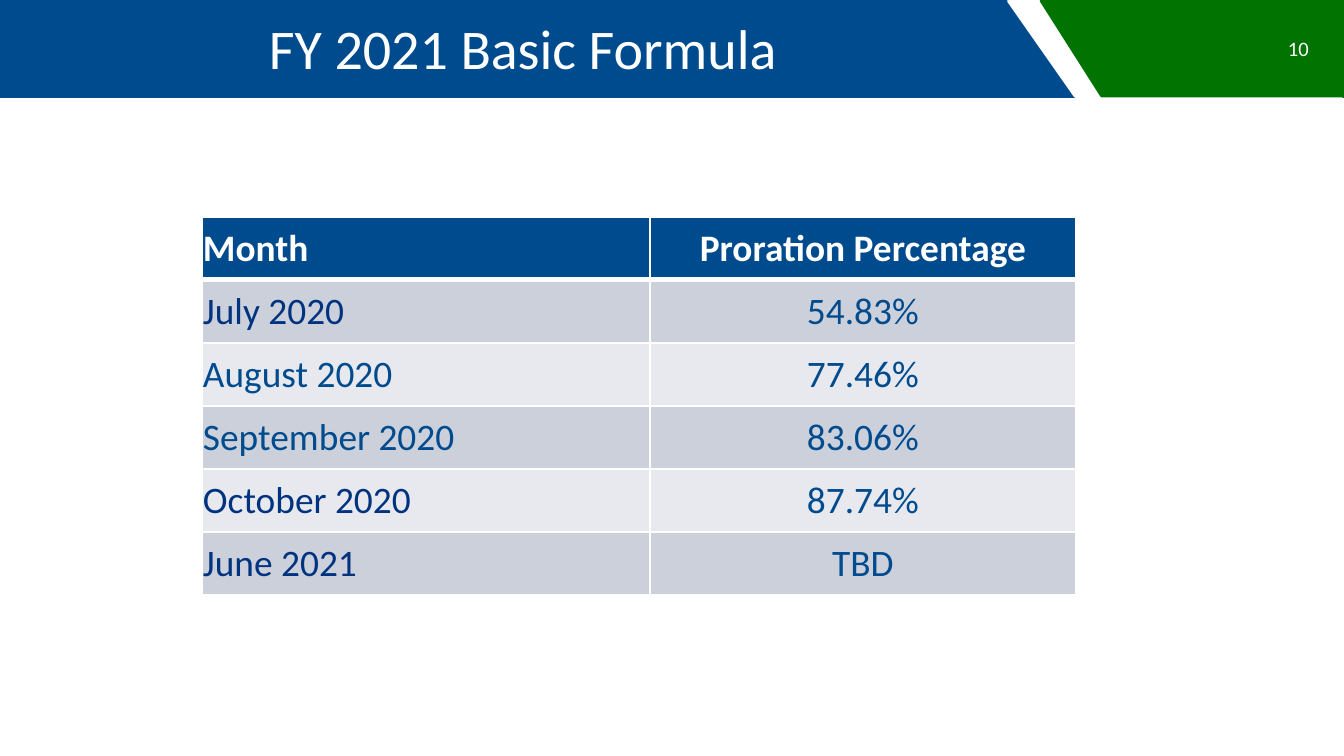
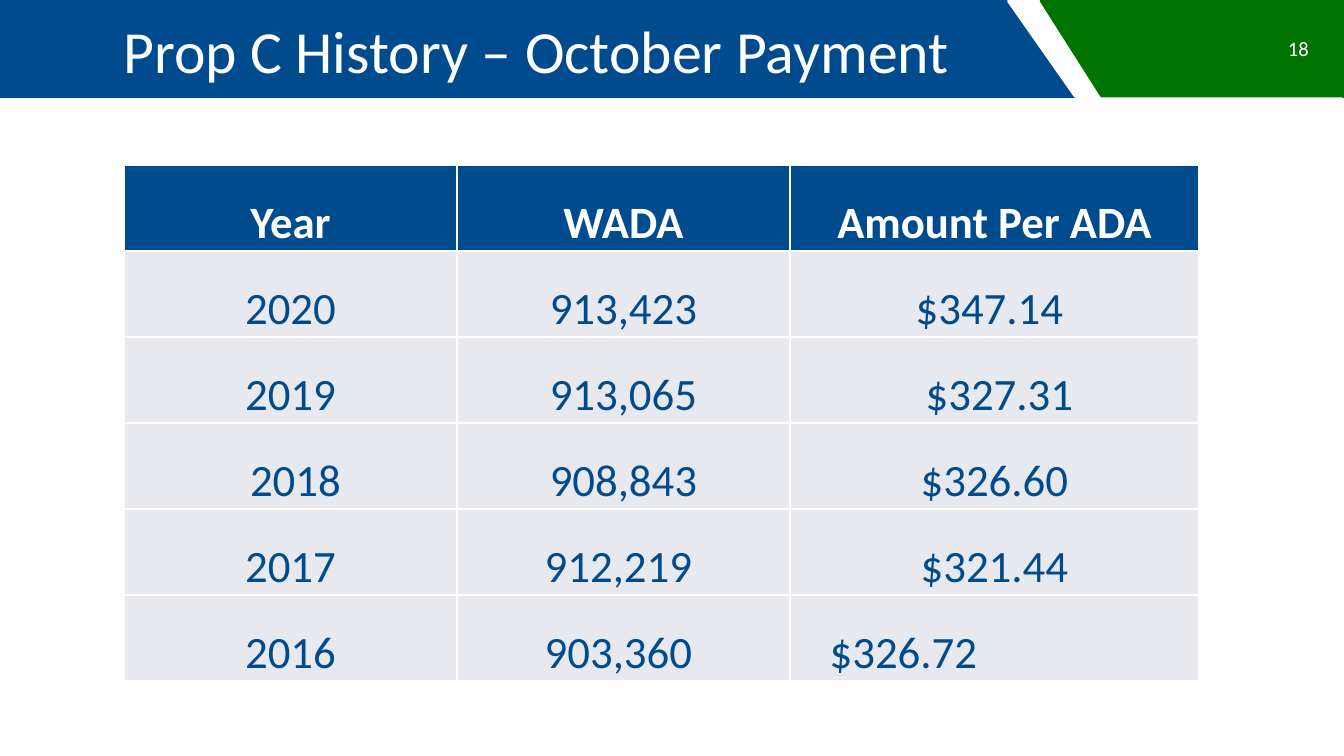
from lxml import etree
from pptx import Presentation
from pptx import util as u
from pptx.dml.color import RGBColor
from pptx.enum import shapes, text
from pptx.oxml import ns

PX = 914400 / 134.4
FONT = "Calibri"
WHITE = RGBColor(0xFF, 0xFF, 0xFF)
BLUE = RGBColor(0x00, 0x4B, 0x8D)
NAVY = RGBColor(0x00, 0x33, 0x7F)
GREEN = RGBColor(0x00, 0x73, 0x00)
GREY = RGBColor(0xCC, 0xD0, 0xDB)
PALE = RGBColor(0xE7, 0xE9, 0xEE)
LEFT, CENTER, RIGHT = text.PP_ALIGN.LEFT, text.PP_ALIGN.CENTER, text.PP_ALIGN.RIGHT
MIDDLE, BOTTOM = text.MSO_ANCHOR.MIDDLE, text.MSO_ANCHOR.BOTTOM

PRORATION = [
    ("Month", "Proration Percentage"),
    ("July 2020", "54.83%"),
    ("August 2020", "77.46%"),
    ("September 2020", "83.06%"),
    ("October 2020", "87.74%"),
    ("June 2021", "TBD"),
]
NAVY_MONTHS = {"July 2020", "October 2020", "June 2021"}
PROP_C = [
    ("Year", "WADA", "Amount Per ADA"),
    ("2020", "913,423", "$347.14"),
    ("2019", "913,065", "$327.31"),
    ("2018", "908,843", "$326.60"),
    ("2017", "912,219", "$321.44"),
    ("2016", "903,360", "$326.72"),
]
SHIFTS = {"$347.14": -5, "$327.31": 5, "2018": 5, "912,219": -5,
          "903,360": -5, "$326.72": -91}


def px(length):
    """Turn whole pixels into EMU."""
    return u.Emu(round(length * PX))


def write(frame, words, size, color=WHITE, bold=False, align=LEFT, indent=0):
    """Put one formatted paragraph into a text frame."""
    frame.word_wrap = True
    para = frame.paragraphs[0]
    para.alignment = align
    if indent:
        properties = para._p.get_or_add_pPr()
        properties.set("marL", str(px(indent)))
        properties.set("indent", "0")
    span = para.add_run()
    span.text = words
    span.font.name, span.font.size = FONT, u.Pt(size)
    span.font.bold, span.font.color.rgb = bold, color


def add_block(page, kind, box, fill, rotation=0, outline=0):
    """Draw a filled shape with an optional outline of its own colour."""
    shape = page.shapes.add_shape(kind, *map(px, box))
    shape.shadow.inherit = False
    shape.rotation = rotation
    shape.fill.solid()
    shape.fill.fore_color.rgb = fill
    if outline:
        shape.line.color.rgb = fill
        shape.line.width = u.Pt(outline)
    else:
        shape.line.fill.background()


def add_header(page, box, title, size, number, indent):
    """Draw the title band with its slanted corner, title and page number."""
    left, top, width, height = box
    right = left + width
    add_block(page, shapes.MSO_SHAPE.RECTANGLE, box, BLUE)
    for offset, rise, length, fill in ((216, 118, 333, WHITE), (199, 103, 302, GREEN)):
        slant = (right - offset, top - rise, 95, length)
        add_block(page, shapes.MSO_SHAPE.FLOWCHART_MANUAL_INPUT, slant, fill, 270, 2)
    label = page.shapes.add_textbox(*map(px, (right - 134, top + 28, 112, 40)))
    label.text_frame.vertical_anchor = MIDDLE
    write(label.text_frame, number, 11, align=RIGHT)
    heading = page.shapes.add_textbox(*map(px, (left + 44, top + 7, 942, 87)))
    write(heading.text_frame, title, size, align=CENTER, indent=indent)


def set_borders(cell, top=1, bottom=1):
    """Give a cell white borders, with widths in points."""
    properties = cell._tc.get_or_add_tcPr()
    sides = (("lnL", 1), ("lnR", 1), ("lnT", top), ("lnB", bottom))
    for position, (side, width) in enumerate(sides):
        line = etree.Element(ns.qn(f"a:{side}"), w=str(u.Pt(width)))
        fill = etree.SubElement(line, ns.qn("a:solidFill"))
        etree.SubElement(fill, ns.qn("a:srgbClr"), val=str(WHITE))
        properties.insert(position, line)


def add_table(page, box, rows, widths, size, anchor, aligns, bands, rule=1):
    """Draw a table with a blue heading row and banded body rows."""
    table = page.shapes.add_table(len(rows), len(widths), *map(px, box)).table
    for column, width in zip(table.columns, widths):
        column.width = px(width)
    for i, values in enumerate(rows):
        table.rows[i].height = px(box[3] // len(rows))
        for j, value in enumerate(values):
            cell = table.cell(i, j)
            shift = SHIFTS.get(value, 0)
            cell.margin_left = px(1 + max(0, 2 * shift))
            cell.margin_right = px(1 + max(0, -2 * shift))
            cell.margin_top, cell.margin_bottom = px(1), 0
            cell.vertical_anchor = anchor
            cell.fill.solid()
            cell.fill.fore_color.rgb = bands[(i - 1) % len(bands)] if i else BLUE
            set_borders(cell, rule if i == 1 else 1, rule if i == 0 else 1)
            body = NAVY if value in NAVY_MONTHS else BLUE
            write(cell.text_frame, value, size, body if i else WHITE, i == 0, aligns[j])


def main():
    """Build both slides and save the deck."""
    deck = Presentation()
    deck.slide_width, deck.slide_height = px(1344), px(756)
    band = (0, 0, 1344, 98)

    page = deck.slides.add_slide(deck.slide_layouts[6])
    add_header(page, band, "FY 2021 Basic Formula", 30, "10", 16)
    add_table(page, (202, 217, 874, 378), PRORATION, (448, 426), 20, MIDDLE,
              (LEFT, CENTER), (GREY, PALE), rule=3)

    page = deck.slides.add_slide(deck.slide_layouts[6])
    add_header(page, band, "Prop C History – October Payment", 32, "18", 43)
    add_table(page, (124, 165, 1075, 516), PROP_C, (333, 333, 409), 24, BOTTOM,
              (CENTER,) * 3, (PALE,))
    deck.save("out.pptx")


if __name__ == "__main__":
    main()
